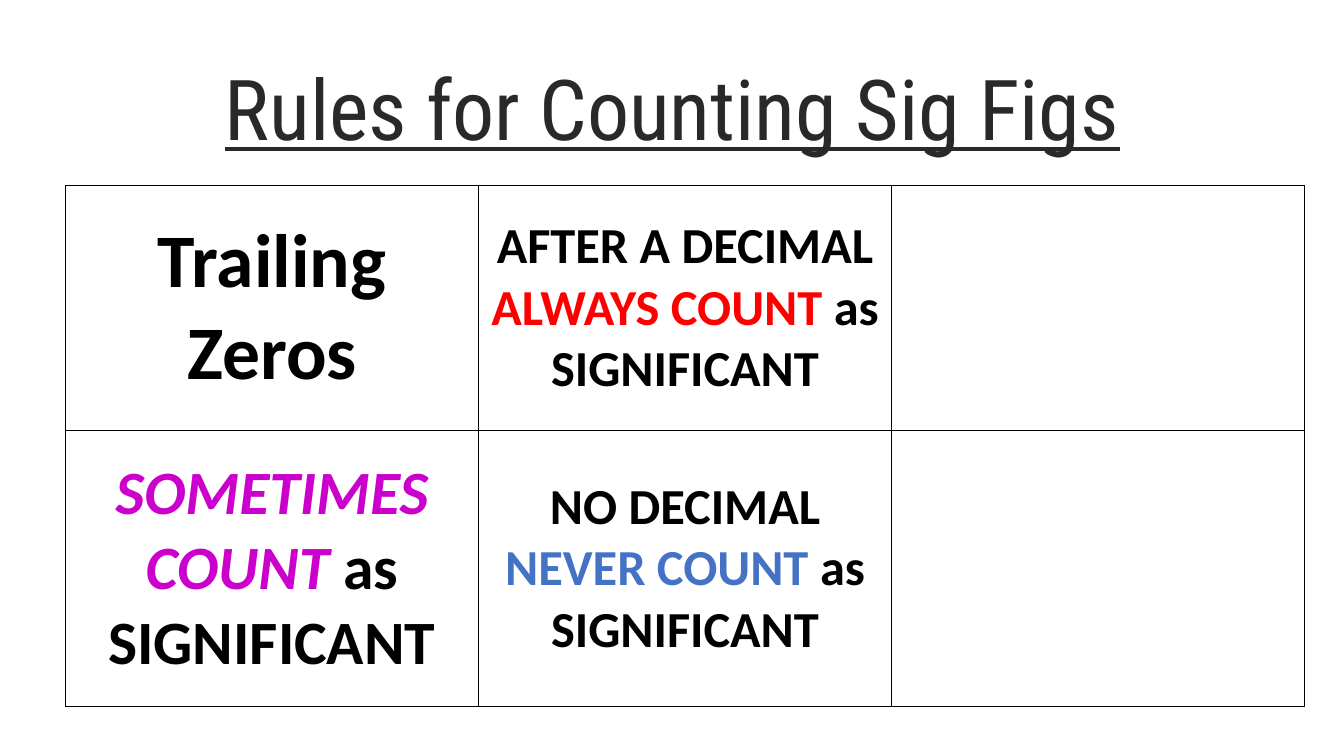
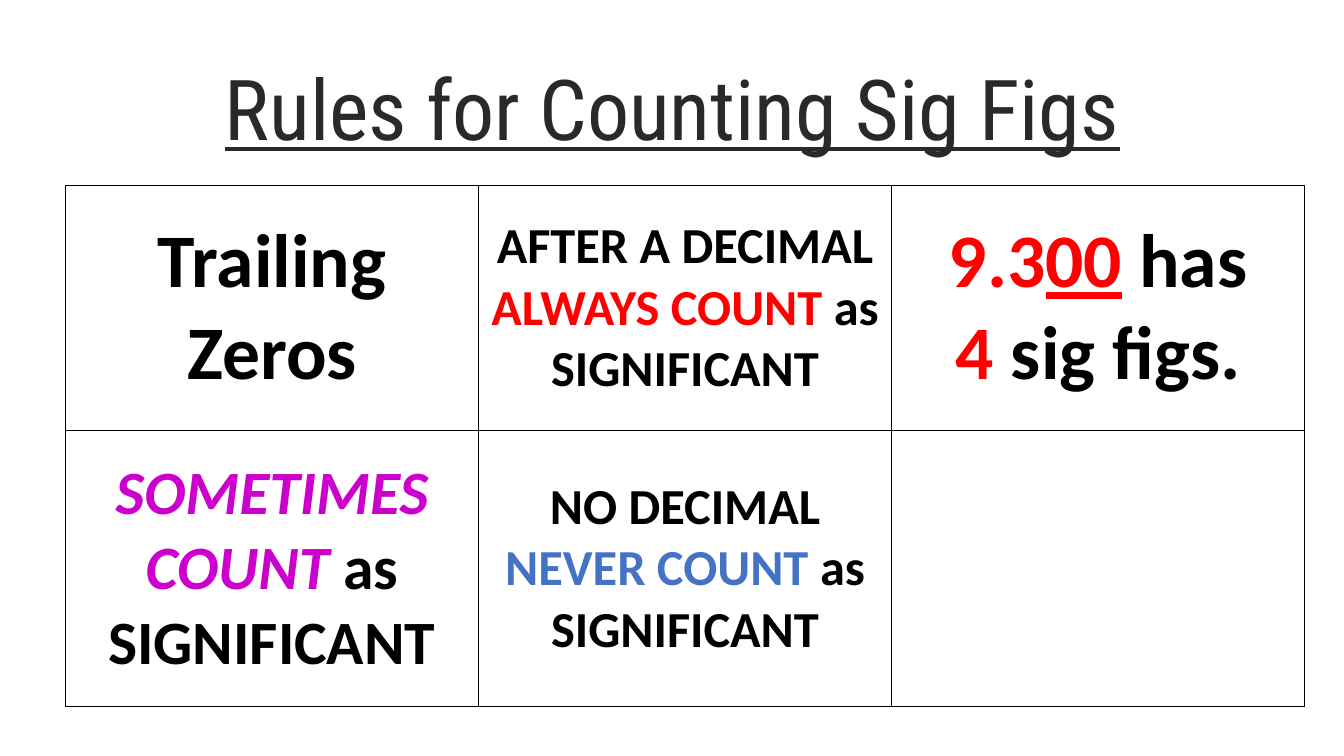
from lxml.etree import SubElement
from pptx import Presentation
from pptx.dml.color import RGBColor
from pptx.enum.text import MSO_ANCHOR as Anchor, MSO_AUTO_SIZE as AutoSize, PP_ALIGN as Align
from pptx.oxml.ns import qn
from pptx.util import Inches, Pt

SLIDE_WIDTH, SLIDE_HEIGHT = Inches(13.33), Inches(7.5)
TITLE_BOX = (6.9, 5.3, 86.25, 19.33)
TABLE_BOX = (4.88, 24.53, 92.2, 68.93)
ROW_SHARES = (0.47, 0.53)
COLUMN_COUNT = 3
TITLE_FONT, BODY_FONT = "Roboto Condensed", "Calibri"

CHARCOAL = RGBColor(0x29, 0x29, 0x29)
BLACK = RGBColor(0x00, 0x00, 0x00)
WHITE = RGBColor(0xFF, 0xFF, 0xFF)
RED = RGBColor(0xFF, 0x00, 0x00)
BLUE = RGBColor(0x44, 0x72, 0xC4)
PURPLE = RGBColor(0xCC, 0x00, 0xCC)


def rule(condition, verdict, color):
    """Describe a rule cell: its condition above a coloured verdict."""
    return 36, [[(f"{condition}\v", BLACK), (f"{verdict} ", color), ("as SIGNIFICANT", BLACK)]]


TOPIC = (54, [[("Trailing Zeros", BLACK)]])
SUMMARY = (44, [[("SOMETIMES COUNT ", PURPLE, "italic"), ("as SIGNIFICANT", BLACK)]])
AFTER_DECIMAL = rule("AFTER A DECIMAL", "ALWAYS COUNT", RED)
NO_DECIMAL = rule("NO DECIMAL", "NEVER COUNT", BLUE)
EXAMPLE = (54, [[("9.3", RED), ("00", RED, "underline"), (" has", BLACK)],
                [("4 ", RED), ("sig figs.", BLACK)]])
UNANSWERED = (54, [])


def scale_box(box):
    """Turn percentages of the slide into left, top, width and height."""
    sides = (SLIDE_WIDTH, SLIDE_HEIGHT) * 2
    return [round(side * share / 100) for side, share in zip(sides, box)]


def place_title(slide, box):
    """Place and format the slide title."""
    title = slide.shapes.title
    title.left, title.top, title.width, title.height = scale_box(box)
    frame = title.text_frame
    frame.text = "Rules for Counting Sig Figs"
    frame.word_wrap, frame.auto_size = True, AutoSize.NONE
    frame.vertical_anchor = Anchor.MIDDLE
    heading = frame.paragraphs[0]
    heading.alignment, heading.line_spacing = Align.CENTER, 0.9
    font = heading.font
    font.name, font.size, font.underline = TITLE_FONT, Pt(60), True
    font.color.rgb = CHARCOAL


def outline_cell(cell):
    """Draw a thin black line on all four sides of a cell."""
    properties = cell._tc.get_or_add_tcPr()
    for side in ("a:lnL", "a:lnR", "a:lnT", "a:lnB"):
        line = SubElement(properties, qn(side), w=str(Pt(1)))
        SubElement(SubElement(line, qn("a:solidFill")), qn("a:srgbClr"), val=str(BLACK))


def write_paragraph(paragraph, size, pieces):
    """Write centred bold text from pieces of words, colour and styles."""
    paragraph.alignment = Align.CENTER
    font = paragraph.font
    font.name, font.size, font.bold = BODY_FONT, Pt(size), True
    for words, color, *styles in pieces:
        run = paragraph.add_run()
        run.text = words.rstrip("\v")
        run.font.color.rgb = color
        for style in styles:
            setattr(run.font, style, True)
        if words.endswith("\v"):
            paragraph.add_line_break()


def fill_cell(cell, content):
    """Outline a cell and write its paragraphs."""
    outline_cell(cell)
    cell.fill.solid()
    cell.fill.fore_color.rgb = WHITE
    cell.vertical_anchor = Anchor.MIDDLE
    size, paragraphs = content
    frame = cell.text_frame
    for index, pieces in enumerate(paragraphs):
        paragraph = frame.add_paragraph() if index else frame.paragraphs[0]
        write_paragraph(paragraph, size, pieces)


def place_rules(slide, box, rows):
    """Place the table of rules and examples in a box."""
    left, top, width, height = scale_box(box)
    rules = slide.shapes.add_table(len(rows), COLUMN_COUNT, left, top, width, height).table
    rules.first_row = rules.horz_banding = False
    for column in rules.columns:
        column.width = width // COLUMN_COUNT
    for row, share, contents in zip(rules.rows, ROW_SHARES, rows):
        row.height = round(height * share)
        for cell, content in zip(row.cells, contents):
            fill_cell(cell, content)


def add_rules_slide(deck, decimal_example):
    """Add one slide of the rules with the given example."""
    slide = deck.slides.add_slide(deck.slide_layouts.get_by_name("Title Only"))
    place_title(slide, TITLE_BOX)
    place_rules(slide, TABLE_BOX, [(TOPIC, AFTER_DECIMAL, decimal_example),
                                   (SUMMARY, NO_DECIMAL, UNANSWERED)])


def main():
    """Build and save the deck."""
    deck = Presentation()
    deck.slide_width, deck.slide_height = SLIDE_WIDTH, SLIDE_HEIGHT
    for decimal_example in (UNANSWERED, EXAMPLE):
        add_rules_slide(deck, decimal_example)
    deck.save("out.pptx")


if __name__ == "__main__":
    main()
